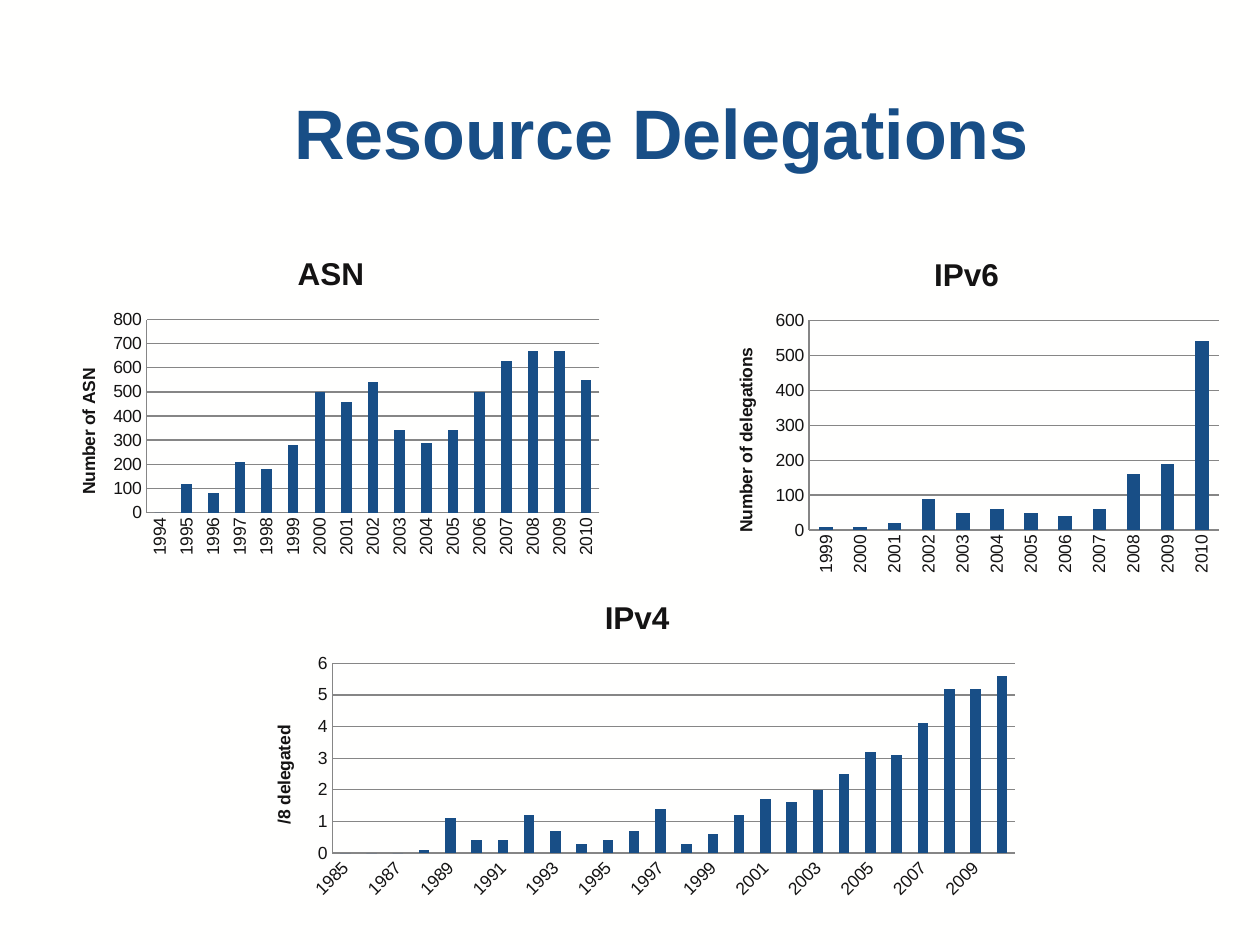
import dataclasses
import typing

import lxml.etree
import pptx
import pptx.chart.data
import pptx.dml.color
import pptx.enum.chart
import pptx.enum.text
import pptx.oxml.ns
import pptx.util

COLOURS = {"background": "FFFFFE", "blue": "184E86", "text": "141313", "grid": "868686"}


@dataclasses.dataclass(frozen=True)
class DelegationChart:
    title: str
    axis_title: str
    box: tuple[float, float, float, float]
    plot_layout: tuple[float, float, float, float]
    title_layout: tuple[float, float]
    axis_title_layout: tuple[float, float]
    first_year: int
    values: tuple[float, ...]
    maximum: float
    major_unit: float
    number_format: str = "#,##0"
    label_angle: int = -90


CHARTS = (
    DelegationChart(
        "ASN", "Number of ASN", (29.5, 134, 319.5, 187),
        (0.17, 0.26, 0.81, 0.59), (0.43, 0.04), (0.04, 0.4), 1994,
        (0, 120, 80, 210, 180, 280, 500, 460, 540, 340, 290, 340, 500, 630, 670, 670, 550),
        800, 100,
    ),
    DelegationChart(
        "IPv6", "Number of delegations", (406, 134, 296.5, 196.5),
        (0.19, 0.25, 0.79, 0.61), (0.42, 0.04), (0.04, 0.32), 1999,
        (10, 10, 20, 90, 50, 60, 50, 40, 60, 160, 190, 540),
        600, 100, number_format="0",
    ),
    DelegationChart(
        "IPv4", "/8 delegated", (140.5, 330.5, 448.5, 187),
        (0.11, 0.26, 0.87, 0.58), (0.45, 0.04), (0.03, 0.44), 1985,
        (0, 0, 0, 0.1, 1.1, 0.4, 0.4, 1.2, 0.7, 0.3, 0.4, 0.7, 1.4,
         0.3, 0.6, 1.2, 1.7, 1.6, 2, 2.5, 3.2, 3.1, 4.1, 5.2, 5.2, 5.6),
        6, 1, label_angle=-45,
    ),
)


def colour(name: str) -> pptx.dml.color.RGBColor:
    return pptx.dml.color.RGBColor.from_string(COLOURS[name])


def set_attributes(target: typing.Any, values: dict[str, typing.Any]) -> None:
    for name, value in values.items():
        setattr(target, name, value)


def format_font(font: typing.Any, size: float, bold: bool, colour_name: str) -> None:
    set_attributes(font, {"name": "Arial", "size": pptx.util.Pt(size), "bold": bold})
    font.color.rgb = colour(colour_name)


def format_line(line: typing.Any) -> None:
    line.color.rgb = colour("grid")
    line.width = pptx.util.Pt(0.75)


def chart_tag(name: str) -> str:
    return pptx.oxml.ns.qn(f"c:{name}")


def make_layout(fractions: tuple[float, ...], inner: bool = False) -> typing.Any:
    layout = lxml.etree.Element(chart_tag("layout"))
    manual = lxml.etree.SubElement(layout, chart_tag("manualLayout"))
    settings = {"layoutTarget": "inner"} if inner else {}
    settings |= {"xMode": "edge", "yMode": "edge"}
    settings |= dict(zip("xywh", map(str, fractions)))
    for name, value in settings.items():
        lxml.etree.SubElement(manual, chart_tag(name)).set("val", value)
    return layout


def place(element: typing.Any, layout: typing.Any, index: int) -> None:
    for previous in element.findall(chart_tag("layout")):
        element.remove(previous)
    element.insert(index, layout)


def rotate(element: typing.Any, degrees: int) -> None:
    body = element.find(".//" + pptx.oxml.ns.qn("a:bodyPr"))
    body.set("rot", str(degrees * 60000))
    body.set("vert", "horz")


def add_title(title: typing.Any, text: str, size: float, position: tuple[float, float]) -> None:
    title.text_frame.text = text
    format_font(title.text_frame.paragraphs[0].runs[0].font, size, True, "text")
    place(title._element, make_layout(position), 1)


def add_delegation_chart(slide: typing.Any, item: DelegationChart) -> None:
    data = pptx.chart.data.CategoryChartData(number_format="General")
    data.categories = [str(item.first_year + offset) for offset in range(len(item.values))]
    data.add_series("Series 1", item.values)
    chart = slide.shapes.add_chart(
        pptx.enum.chart.XL_CHART_TYPE.COLUMN_CLUSTERED, *map(pptx.util.Pt, item.box), data
    ).chart
    format_font(chart.font, 10, False, "text")
    set_attributes(chart, {"has_legend": False, "has_title": True})
    add_title(chart.chart_title, item.title, 18, item.title_layout)

    plot = chart.plots[0]
    set_attributes(plot, {"gap_width": 150, "vary_by_categories": False})
    plot.series[0].format.fill.solid()
    plot.series[0].format.fill.fore_color.rgb = colour("blue")
    plot_area = chart._chartSpace.find(".//" + chart_tag("plotArea"))
    place(plot_area, make_layout(item.plot_layout, inner=True), 0)

    no_ticks = pptx.enum.chart.XL_TICK_MARK.NONE
    for axis in (chart.category_axis, chart.value_axis):
        set_attributes(axis, {"major_tick_mark": no_ticks, "minor_tick_mark": no_ticks})
        format_line(axis.format.line)
        format_font(axis.tick_labels.font, 10, False, "text")
    rotate(chart.category_axis._element.find(chart_tag("txPr")), item.label_angle)

    value_axis = chart.value_axis
    set_attributes(value_axis, {
        "minimum_scale": 0,
        "maximum_scale": item.maximum,
        "major_unit": item.major_unit,
        "has_major_gridlines": True,
        "has_title": True,
    })
    set_attributes(value_axis.tick_labels, {
        "number_format": item.number_format,
        "number_format_is_linked": False,
    })
    format_line(value_axis.major_gridlines.format.line)
    add_title(value_axis.axis_title, item.axis_title, 10, item.axis_title_layout)
    rotate(value_axis.axis_title._element, -90)


def add_heading(slide: typing.Any, text: str) -> None:
    frame = slide.shapes.add_textbox(*map(pptx.util.Pt, (60, 30, 636, 90))).text_frame
    set_attributes(frame, {
        "word_wrap": True,
        "vertical_anchor": pptx.enum.text.MSO_ANCHOR.MIDDLE,
        "text": text,
    })
    paragraph = frame.paragraphs[0]
    paragraph.alignment = pptx.enum.text.PP_ALIGN.CENTER
    format_font(paragraph.runs[0].font, 40, True, "blue")


def main() -> None:
    """Build the resource delegations slide with its three column charts."""
    presentation = pptx.Presentation()
    set_attributes(presentation, {
        "slide_width": pptx.util.Pt(720),
        "slide_height": pptx.util.Pt(540),
    })
    slide = presentation.slides.add_slide(presentation.slide_layouts[6])
    slide.background.fill.solid()
    slide.background.fill.fore_color.rgb = colour("background")
    add_heading(slide, "Resource Delegations")
    for item in CHARTS:
        add_delegation_chart(slide, item)
    presentation.save("out.pptx")


if __name__ == "__main__":
    main()
